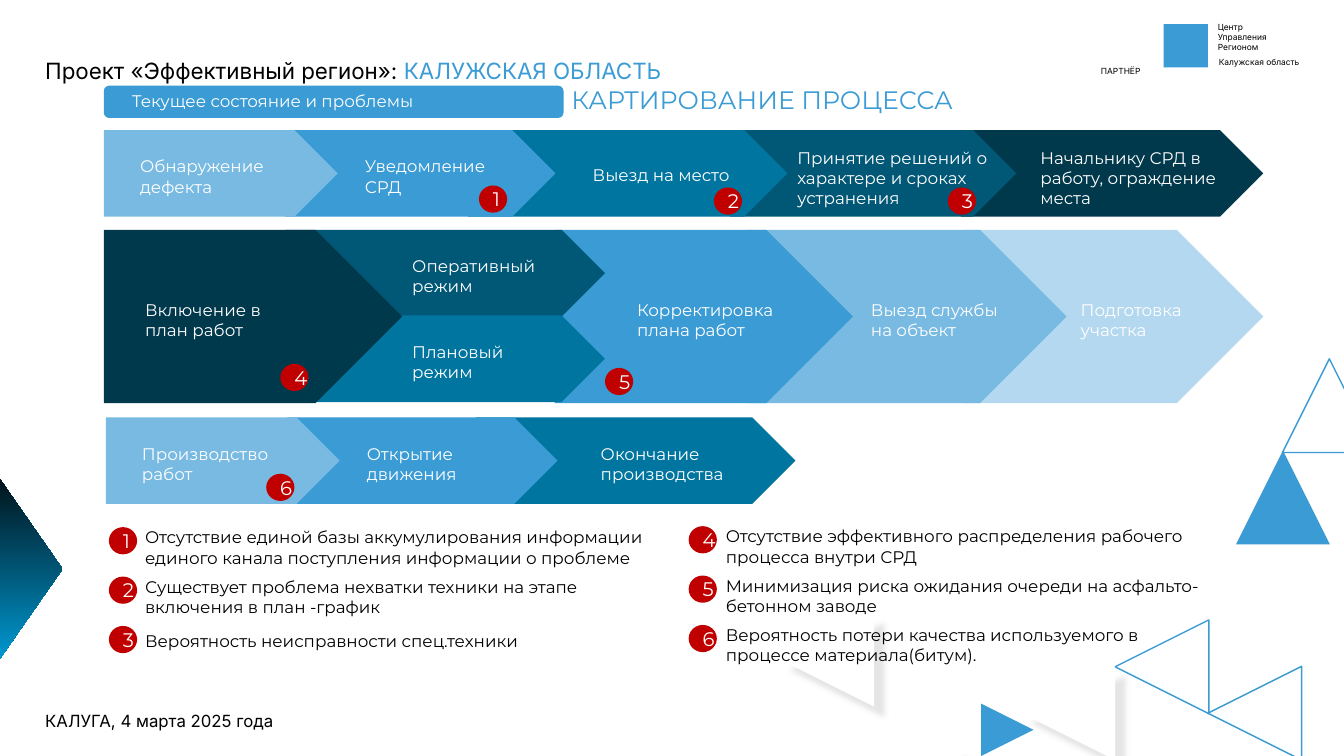
from dataclasses import dataclass

from lxml import etree
from pptx import Presentation
from pptx.dml.color import RGBColor
from pptx.enum.shapes import MSO_SHAPE
from pptx.enum.text import MSO_ANCHOR, MSO_AUTO_SIZE, PP_ALIGN
from pptx.oxml import parse_xml
from pptx.util import Inches, Pt

PLATE, OVAL, TRIANGLE = MSO_SHAPE.PENTAGON, MSO_SHAPE.OVAL, MSO_SHAPE.ISOSCELES_TRIANGLE
RECTANGLE, ROUNDED = MSO_SHAPE.RECTANGLE, MSO_SHAPE.ROUNDED_RECTANGLE
MIDDLE, BOTTOM, CENTER = MSO_ANCHOR.MIDDLE, MSO_ANCHOR.BOTTOM, PP_ALIGN.CENTER
GROW, FIXED = MSO_AUTO_SIZE.SHAPE_TO_FIT_TEXT, MSO_AUTO_SIZE.NONE
DRAWING = "http://schemas.openxmlformats.org/drawingml/2006/main"


@dataclass(frozen=True)
class Theme:
    ink: str = "000000"
    white: str = "FFFFFF"
    alert: str = "C00000"
    shadow: str = "BFBFBF"
    pale: str = "B3D8EF"
    light: str = "78BAE2"
    accent: str = "3A9BD5"
    teal: str = "0075A0"
    deep: str = "005776"
    navy: str = "00384C"
    heading_font: str = "Inter"
    body_font: str = "Montserrat"
    tiny: float = 6
    body: float = 12
    badge: float = 14
    heading: float = 16
    title: float = 18


THEME = Theme()
WIDTH, HEIGHT = 13.33, 7.5
ROW = 0.86  # height of a single arrow; the middle row is two of them
BADGE = (0.28, 0.27)
TRIANGLE_SIDE = 0.93
LABEL_HEIGHTS = {1: 0.26, 2: 0.44, 3: 0.61}

# top, height, steps: text, lines, colour, left, width, label left, label width
PROCESS = [
    (1.29, ROW, [
        ("Обнаружение дефекта", 2, THEME.light, 1.03, 2.32, 1.29, 1.71),
        ("Уведомление СРД", 2, THEME.accent, 2.83, 2.68, 3.52, 1.71),
        ("Выезд на место", 1, THEME.teal, 4.64, 3.17, 5.78, 1.71),
        ("Принятие решений о характере и сроках устранения", 3, THEME.deep,
         7.24, 2.84, 7.81, 2.16),
        ("Начальнику СРД в работу, ограждение места", 3, THEME.navy,
         9.53, 3, 10.22, 2.16),
    ]),
    (2.28, 2 * ROW, [
        ("Корректировка плана работ", 2, THEME.accent, 5.5, 2.96, 6.22, 1.71),
        ("Выезд службы на объект", 2, THEME.light, 7.41, 3.17, 8.54, 1.6),
        ("Подготовка участка", 2, THEME.pale, 9.57, 2.96, 10.62, 1.71),
    ]),
    (2.28, ROW, [("Оперативный режим", 2, THEME.deep, 2.83, 3.17, 3.99, 1.71)]),
    (3.13, ROW, [("Плановый режим", 2, THEME.teal, 2.83, 3.17, 3.99, 1.71)]),
    (2.28, 2 * ROW, [("Включение в план работ", 2, THEME.navy, 1.03, 2.96, 1.34, 1.71)]),
    (4.14, ROW, [
        ("Производство работ", 2, THEME.light, 1.05, 2.32, 1.31, 1.71),
        ("Открытие движения", 2, THEME.accent, 2.85, 2.68, 3.54, 1.71),
        ("Окончание производства", 2, THEME.teal, 4.72, 3.17, 5.86, 1.71),
    ]),
]
STEP_BADGES = [("1", 4.75, 1.84), ("2", 7.08, 1.86), ("3", 9.4, 1.86),
               ("4", 2.78, 3.61), ("5", 6, 3.65), ("6", 2.64, 4.7)]

# badge left, text left, text width, first badge top, problems with text offsets
PROBLEMS = [
    (1.08, 1.34, 5.31, 5.23, [
        ("1", "Отсутствие единой базы аккумулирования информации единого канала "
              "поступления информации о проблеме", -0.05),
        ("2", "Существует проблема нехватки техники на этапе включения в план -график", -0.05),
        ("3", "Вероятность неисправности спец.техники", 0),
    ]),
    (6.83, 7.1, 4.95, 5.22, [
        ("4", "Отсутствие эффективного распределения рабочего процесса внутри СРД", -0.05),
        ("5", "Минимизация риска ожидания очереди на асфальто-бетонном заводе", -0.05),
        ("6", "Вероятность потери качества используемого в процессе материала(битум).", -0.05),
    ]),
]
PROBLEM_STEP = 0.49

# left, top, rotation, style
TRIANGLES = [
    (12.26, 4.47, 0, "solid"), (12.72, 3.56, 0, "outline"),
    (11.98, 6.61, 270, "outline"), (11.06, 6.15, 270, "outline"),
    (10.13, 6.61, 270, "shadow"), (8.66, 7.01, 90, "shadow"), (7.74, 6.08, 270, "shadow"),
]
EDGE_GRADIENT = [(0, "010101"), (5, "00AEEF"), (93, "010101"), (100, "00AEEF")]


def add_form(page, kind, left, top, width, height, fill=None, line=None, turn=0):
    form = page.shapes.add_shape(kind, *map(Inches, (left, top, width, height)))
    form.shadow.inherit = False
    form.rotation = turn
    if fill:
        form.fill.solid()
        form.fill.fore_color.rgb = RGBColor.from_string(fill)
    else:
        form.fill.background()
    if line:
        form.line.color.rgb = RGBColor.from_string(line)
        form.line.width = Pt(1)
    else:
        form.line.fill.background()
    return form


def add_span(para, text, size, color, font):
    span = para.add_run()
    span.text = text
    span.font.size = Pt(size)
    span.font.name = font
    span.font.color.rgb = RGBColor.from_string(color)


def add_text(page, left, top, width, height, paragraphs, size, font=THEME.body_font,
             align=None, spacing=None):
    """Each paragraph is a list of (text, colour) runs."""
    box = page.shapes.add_textbox(*map(Inches, (left, top, width, height)))
    frame = box.text_frame
    frame.word_wrap = True
    frame.auto_size = GROW
    for index, spans in enumerate(paragraphs):
        para = frame.add_paragraph() if index else frame.paragraphs[0]
        para.alignment = align
        para.line_spacing = spacing
        for text, color in spans:
            add_span(para, text, size, color, font)


def add_badge(page, number, left, top):
    badge = add_form(page, OVAL, left, top, *BADGE, fill=THEME.alert)
    badge.text_frame.vertical_anchor = MIDDLE
    para = badge.text_frame.paragraphs[0]
    para.alignment = CENTER
    add_span(para, number, THEME.badge, THEME.white, THEME.body_font)


def cast_shadow(form):
    effects = form._element.spPr.find(f"{{{DRAWING}}}effectLst")
    shadow = etree.SubElement(effects, f"{{{DRAWING}}}outerShdw", blurRad=str(Pt(4)),
                              dist=str(Pt(10)), dir="2700000", algn="tl", rotWithShape="0")
    color = etree.SubElement(shadow, f"{{{DRAWING}}}srgbClr", val=THEME.shadow)
    etree.SubElement(color, f"{{{DRAWING}}}alpha", val="40000")


def fill_gradient(form, stops):
    marks = "".join(f'<a:gs pos="{share * 1000}"><a:srgbClr val="{color}"/></a:gs>'
                    for share, color in stops)
    gradient = parse_xml(f'<a:gradFill xmlns:a="{DRAWING}" rotWithShape="1"><a:gsLst>{marks}'
                         '</a:gsLst><a:lin ang="10800000" scaled="0"/></a:gradFill>')
    blank = form._element.spPr.find(f"{{{DRAWING}}}noFill")
    form._element.spPr.replace(blank, gradient)


def draw_template(page):
    add_form(page, RECTANGLE, 11.54, 0.24, 0.44, 0.43, THEME.accent)
    small = dict(size=THEME.tiny, font=THEME.heading_font)
    add_text(page, 11.98, 0.17, 1.35, 0.4,
             [[(word, THEME.ink)] for word in ("Центр", "Управления", "Регионом")], **small)
    add_text(page, 11.99, 0.52, 1.34, 0.2, [[("Калужская область", THEME.ink)]], **small)
    add_text(page, 10.73, 0.61, 0.77, 0.2, [[("ПАРТНЁР", THEME.ink)]], align=CENTER, **small)
    add_text(page, 0.35, -0.08, 6.5, 0.81,
             [[("Проект «Эффективный регион»: ", THEME.ink), ("КАЛУЖСКАЯ ОБЛАСТЬ", THEME.accent)]],
             THEME.heading, THEME.heading_font, spacing=Pt(62))
    add_text(page, 0.35, 6.34, 2.8, 0.81, [[("КАЛУГА, 4 марта 2025 года", THEME.ink)]],
             THEME.body, THEME.heading_font, spacing=Pt(62))
    styles = {"solid": (THEME.accent, None), "outline": (None, THEME.accent),
              "shadow": (THEME.white, None)}
    for left, top, turn, style in TRIANGLES:
        form = add_form(page, TRIANGLE, left, top, TRIANGLE_SIDE, TRIANGLE_SIDE,
                        *styles[style], turn=turn)
        if style == "shadow":
            cast_shadow(form)
    edge = add_form(page, TRIANGLE, -1.18, 5.18, 2.67, TRIANGLE_SIDE, turn=90)
    fill_gradient(edge, EDGE_GRADIENT)
    add_form(page, TRIANGLE, 9.73, 6.98, 0.52, 0.52, THEME.accent, turn=90)


def draw_process(page):
    for top, height, steps in PROCESS:
        for text, lines, color, left, width, label_left, label_width in reversed(steps):
            add_form(page, PLATE, left, top, width, height, color)
            label_height = LABEL_HEIGHTS[lines]
            add_text(page, label_left, top + (height - label_height) / 2, label_width,
                     label_height, [[(text, THEME.white)]], THEME.body)
    for number, left, top in STEP_BADGES:
        add_badge(page, number, left, top)


def draw_problems(page):
    for badge_left, text_left, width, first, problems in PROBLEMS:
        for index, (number, text, offset) in enumerate(problems):
            top = first + index * PROBLEM_STEP
            add_badge(page, number, badge_left, top)
            add_text(page, text_left, top + offset, width, 0.5, [[(text, THEME.ink)]], THEME.body)


def draw_title(page):
    add_form(page, ROUNDED, 1.03, 0.85, 4.56, 0.32, THEME.accent)
    add_text(page, 1.21, 0.85, 3.28, 0.3, [[("Текущее состояние и проблемы", THEME.white)]],
             THEME.body)
    title = page.shapes.title
    title.left, title.top, title.width, title.height = map(Inches, (5.31, 0.82, 4.5, 0.37))
    title.text_frame.auto_size = FIXED
    title.text_frame.word_wrap = True
    title.text_frame.vertical_anchor = BOTTOM
    para = title.text_frame.paragraphs[0]
    para.alignment = CENTER
    para.line_spacing = 0.9
    add_span(para, "КАРТИРОВАНИЕ ПРОЦЕССА", THEME.title, THEME.accent, THEME.body_font)


def main():
    deck = Presentation()
    deck.slide_width, deck.slide_height = Inches(WIDTH), Inches(HEIGHT)
    page = deck.slides.add_slide(deck.slide_layouts[5])
    draw_template(page)
    draw_process(page)
    draw_problems(page)
    draw_title(page)
    deck.save("out.pptx")


if __name__ == "__main__":
    main()
